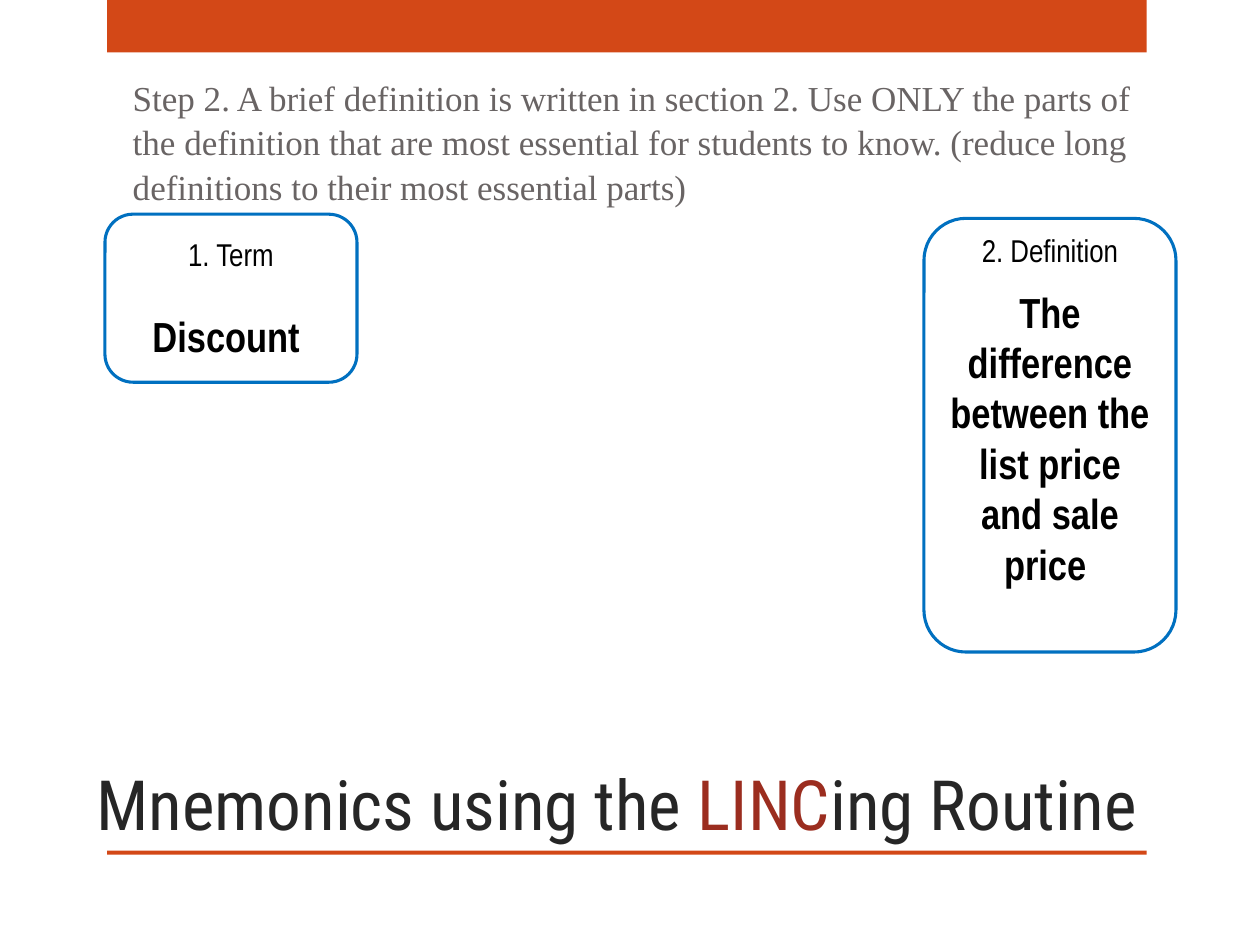
import pptx
import pptx.dml.color
import pptx.enum.shapes
import pptx.enum.text
import pptx.util

COLUMNS, ROWS = 120, 90
ACCENT = "D34817"
ANCHOR = pptx.enum.text.MSO_ANCHOR
ALIGN = pptx.enum.text.PP_ALIGN
SHAPE = pptx.enum.shapes.MSO_SHAPE


def color(value):
    return pptx.dml.color.RGBColor.from_string(value)


def write(paragraph, text, font, size, fill="000000", bold=False):
    run = paragraph.add_run()
    run.text = text
    run.font.name = font
    run.font.size = pptx.util.Pt(size)
    run.font.bold = bold
    run.font.color.rgb = color(fill)


class SlideBuilder:
    title_font = "Roboto Condensed"
    body_font = "Times New Roman"
    card_font = "Arial Narrow"

    def __init__(self, presentation):
        self.column = presentation.slide_width / COLUMNS
        self.row = presentation.slide_height / ROWS
        self.slide = presentation.slides.add_slide(presentation.slide_layouts[6])

    def place(self, left, top, width, height):
        return (round(left * self.column), round(top * self.row),
                round(width * self.column), round(height * self.row))

    def shape(self, kind, *area):
        shape = self.slide.shapes.add_shape(kind, *self.place(*area))
        shape.shadow.inherit = False
        return shape

    def text_frame(self, *area, anchor):
        frame = self.slide.shapes.add_textbox(*self.place(*area)).text_frame
        frame.word_wrap = True
        frame.vertical_anchor = anchor
        return frame

    def bar(self, top, height):
        bar = self.shape(SHAPE.RECTANGLE, 10.2, top, 99, height)
        bar.fill.solid()
        bar.fill.fore_color.rgb = color(ACCENT)
        bar.line.fill.background()

    def title(self, *parts):
        frame = self.text_frame(8, 70, 110, 11, anchor=ANCHOR.BOTTOM)
        for text, fill in parts:
            write(frame.paragraphs[0], text, self.title_font, 39.6, fill)

    def body(self, text):
        frame = self.text_frame(10, 0.4, 99, 34, anchor=ANCHOR.TOP)
        frame.margin_left = pptx.util.Inches(0.22)
        frame.margin_top = pptx.util.Inches(0.56)
        paragraph = frame.paragraphs[0]
        paragraph.line_spacing = 1.05
        write(paragraph, text, self.body_font, 20, "696464")

    def card(self, *area, label, text, gap, bottom=0.05):
        card = self.shape(SHAPE.ROUNDED_RECTANGLE, *area)
        card.fill.background()
        card.line.color.rgb = color("0070C0")
        card.line.width = pptx.util.Pt(1.75)
        frame = card.text_frame
        frame.word_wrap = True
        frame.vertical_anchor = ANCHOR.MIDDLE
        frame.margin_bottom = pptx.util.Inches(bottom)
        heading, content = frame.paragraphs[0], frame.add_paragraph()
        heading.alignment = content.alignment = ALIGN.CENTER
        content.space_before = pptx.util.Pt(gap)
        write(heading, label, self.card_font, 18)
        write(content, text, self.card_font, 24, bold=True)


def main():
    presentation = pptx.Presentation()
    presentation.slide_width = pptx.util.Inches(10)
    presentation.slide_height = pptx.util.Inches(7.5)

    builder = SlideBuilder(presentation)
    builder.bar(0, 5)
    builder.bar(81, 0.4)
    builder.title(("Mnemonics using the ", "262626"), ("LINC", "9B2D1F"),
                  ("ing Routine", "262626"))
    builder.body("Step 2. A brief definition is written in section 2. Use ONLY "
                 "the parts of the definition that are most essential for students "
                 "to know. (reduce long definitions to their most essential parts)")
    builder.card(10, 20.4, 24, 16, label="1. Term", text="Discount ", gap=21.6)
    builder.card(88, 20.8, 24, 41.3, label="2. Definition",
                 text="The difference between the list price and sale price ",
                 gap=9.6, bottom=0.45)
    presentation.save("out.pptx")


if __name__ == "__main__":
    main()
